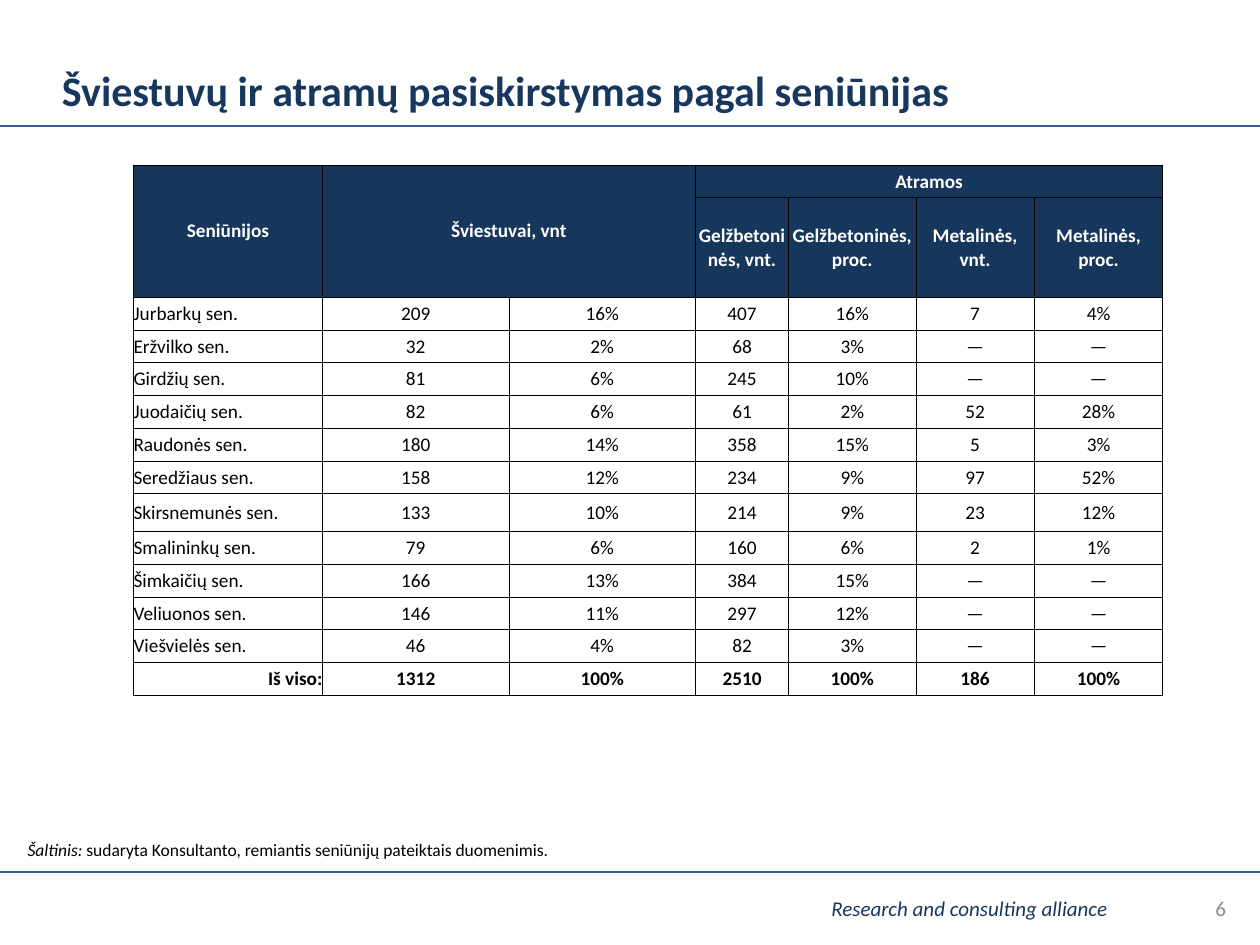
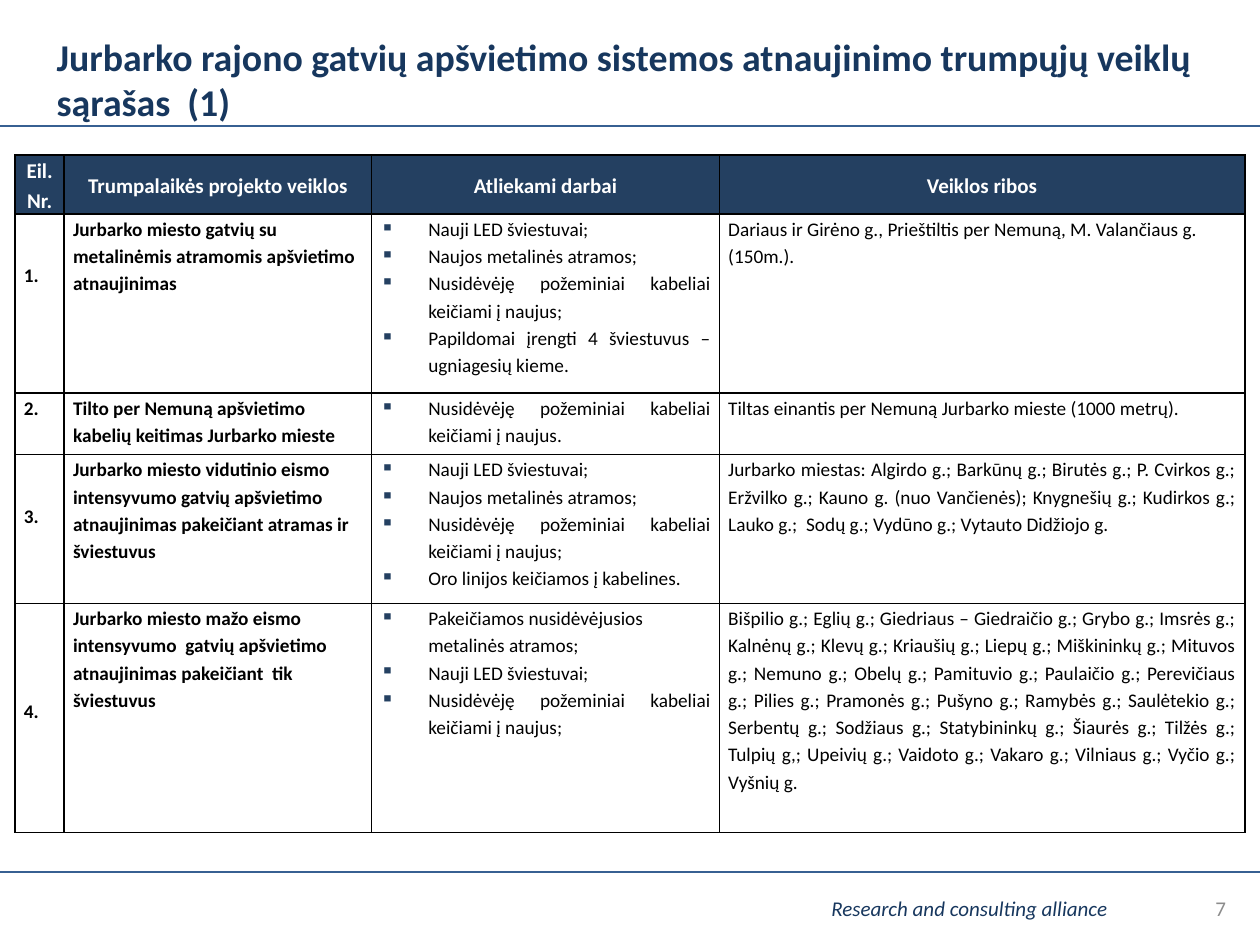
"""Build two slides on street lighting in the Jurbarkas district."""
import pptx
import pptx.util
import pptx.dml.color
import pptx.enum.shapes
import pptx.enum.text
import pptx.oxml
import pptx.oxml.ns
from pptx.util import Inches

RGBColor = pptx.dml.color.RGBColor
ALIGN = pptx.enum.text.PP_ALIGN
ANCHOR = pptx.enum.text.MSO_ANCHOR

NAVY = RGBColor(0x17, 0x37, 0x5E)
RULE_BLUE = RGBColor(0x37, 0x60, 0x92)
HEAD_NAVY = RGBColor(0x16, 0x36, 0x5C)
HEAD_SLATE = RGBColor(0x24, 0x40, 0x61)
GRAY = RGBColor(0x8C, 0x8C, 0x8C)
BLACK = RGBColor(0, 0, 0)
WHITE = RGBColor(0xFF, 0xFF, 0xFF)

FONT = "Calibri"
FOOTER = "Research and consulting alliance"

WARDS = [
    ("Jurbarkų sen.", "209", "16%", "407", "16%", "7", "4%"),
    ("Eržvilko sen.", "32", "2%", "68", "3%", "—", "—"),
    ("Girdžių sen.", "81", "6%", "245", "10%", "—", "—"),
    ("Juodaičių sen.", "82", "6%", "61", "2%", "52", "28%"),
    ("Raudonės sen.", "180", "14%", "358", "15%", "5", "3%"),
    ("Seredžiaus sen.", "158", "12%", "234", "9%", "97", "52%"),
    ("Skirsnemunės sen.", "133", "10%", "214", "9%", "23", "12%"),
    ("Smalininkų sen.", "79", "6%", "160", "6%", "2", "1%"),
    ("Šimkaičių sen.", "166", "13%", "384", "15%", "—", "—"),
    ("Veliuonos sen.", "146", "11%", "297", "12%", "—", "—"),
    ("Viešvielės sen.", "46", "4%", "82", "3%", "—", "—"),
    ("Iš viso:", "1312", "100%", "2510", "100%", "186", "100%"),
]
WARD_HEADS = [
    (0, 0, 1, 0, "Seniūnijos"),
    (0, 1, 1, 2, "Šviestuvai, vnt"),
    (0, 3, 0, 6, "Atramos"),
    (1, 3, 1, 3, "Gelžbetoninės, vnt."),
    (1, 4, 1, 4, "Gelžbetoninės, proc."),
    (1, 5, 1, 5, "Metalinės, vnt."),
    (1, 6, 1, 6, "Metalinės, proc."),
]

LED = "Nauji LED šviestuvai;"
POLES = "Naujos metalinės atramos;"
CABLES = "Nusidėvėję požeminiai kabeliai keičiami į naujus"
ACTIVITY_HEADS = ["Eil. Nr.", "Trumpalaikės projekto veiklos", "Atliekami darbai", "Veiklos ribos"]
ACTIVITIES = [
    ("1.", 0.37, "Jurbarko miesto gatvių su metalinėmis atramomis apšvietimo atnaujinimas",
     [LED, POLES, CABLES + ";", "Papildomai įrengti 4 šviestuvus – ugniagesių kieme."],
     "Dariaus ir Girėno g., Prieštiltis per Nemuną, M. Valančiaus g. (150m.)."),
    ("2.", 0, "Tilto per Nemuną apšvietimo kabelių keitimas Jurbarko mieste",
     [CABLES + "."],
     "Tiltas einantis per Nemuną Jurbarko mieste (1000 metrų)."),
    ("3.", 0.37, "Jurbarko miesto vidutinio eismo intensyvumo gatvių apšvietimo "
     "atnaujinimas pakeičiant atramas ir šviestuvus",
     [LED, POLES, CABLES + ";", "Oro linijos keičiamos į kabelines."],
     "Jurbarko miestas: Algirdo g.; Barkūnų g.; Birutės g.; P. Cvirkos g.; Eržvilko g.; "
     "Kauno g. (nuo Vančienės); Knygnešių g.; Kudirkos g.; Lauko g.;  Sodų g.; Vydūno g.; "
     "Vytauto Didžiojo g."),
    ("4.", 0.74, "Jurbarko miesto mažo eismo intensyvumo  gatvių apšvietimo "
     "atnaujinimas pakeičiant  tik šviestuvus",
     ["Pakeičiamos nusidėvėjusios metalinės atramos;", LED, CABLES + ";"],
     "Bišpilio g.; Eglių g.; Giedriaus – Giedraičio g.; Grybo g.; Imsrės g.; Kalnėnų g.; "
     "Klevų g.; Kriaušių g.; Liepų g.; Miškininkų g.; Mituvos g.; Nemuno g.; Obelų g.; "
     "Pamituvio g.; Paulaičio g.; Perevičiaus g.; Pilies g.; Pramonės g.; Pušyno g.; "
     "Ramybės g.; Saulėtekio g.; Serbentų g.; Sodžiaus g.; Statybininkų g.; Šiaurės g.; "
     "Tilžės g.; Tulpių g,; Upeivių g.; Vaidoto g.; Vakaro g.; Vilniaus g.; Vyčio g.; Vyšnių g."),
]


class Deck:
    """Holds the shared style and the current slide."""

    def __init__(self):
        self.prs = pptx.Presentation()
        self.prs.slide_width = Inches(10)
        self.prs.slide_height = Inches(7.5)
        self.s = None

    def slide(self, number, title, at, size):
        """Start a slide with its title, rules and footer."""
        self.s = self.prs.slides.add_slide(self.prs.slide_layouts[5])
        for y in (1, 6.92):
            self.rule(y)
        self.text((6.5, 7.06, 3.46, 0.29), [(FOOTER, dict(size=12, color=NAVY, italic=True))])
        self.text((7.5, 7.01, 2.33, 0.4), [(str(number), dict(size=12, color=GRAY))], ALIGN.RIGHT)
        sp = self.s.shapes.title
        sp.left, sp.top, sp.width, sp.height = map(Inches, at)
        self.fill_frame(sp.text_frame, [(title, dict(size=size, color=NAVY, bold=True))], ALIGN.LEFT)

    def rule(self, y):
        """Draw a line across the slide."""
        line = self.s.shapes.add_connector(
            pptx.enum.shapes.MSO_CONNECTOR.STRAIGHT, 0, Inches(y), Inches(10), Inches(y))
        line.line.color.rgb = RULE_BLUE
        line.line.width = pptx.util.Pt(1)
        line._element.spPr.append(pptx.oxml.parse_xml(
            f'<a:effectLst {pptx.oxml.ns.nsdecls("a")}/>'))

    def run(self, p, text, size=11, color=BLACK, bold=False, italic=False):
        """Add one styled run."""
        r = p.add_run()
        r.text = text
        r.font.name = FONT
        r.font.size = pptx.util.Pt(size)
        r.font.color.rgb = color
        r.font.bold = bold
        r.font.italic = italic

    def fill_frame(self, tf, runs, align):
        """Put one vertically centred paragraph in a frame."""
        tf.word_wrap = True
        tf.auto_size = pptx.enum.text.MSO_AUTO_SIZE.NONE
        tf.vertical_anchor = ANCHOR.MIDDLE
        p = tf.paragraphs[0]
        p.alignment = align
        for text, style in runs:
            self.run(p, text, **style)

    def text(self, at, runs, align=ALIGN.LEFT):
        """Add a text box."""
        sp = self.s.shapes.add_textbox(*map(Inches, at))
        self.fill_frame(sp.text_frame, runs, align)

    def table(self, left, top, cols, rows, border):
        """Add a plain table with black borders."""
        frame = self.s.shapes.add_table(len(rows), len(cols), Inches(left), Inches(top),
                                        Inches(sum(cols)), Inches(sum(rows)))
        table = frame.table
        table.first_row = table.horz_banding = False
        for col, width in zip(table.columns, cols):
            col.width = Inches(width)
        for row, height in zip(table.rows, rows):
            row.height = Inches(height)
        for cell in table.iter_cells():
            tc_pr = cell._tc.get_or_add_tcPr()
            for side in "LRTB":
                tc_pr.append(pptx.oxml.parse_xml(
                    f'<a:ln{side} {pptx.oxml.ns.nsdecls("a")} w="{pptx.util.Pt(border)}">'
                    f'<a:solidFill><a:srgbClr val="{BLACK}"/></a:solidFill></a:ln{side}>'))
            cell.fill.background()
        return table

    def cell(self, cell, lines, align=ALIGN.CENTER, anchor=ANCHOR.MIDDLE, fill=None,
             side=0, top=0, spacing=1, bullet=False, **style):
        """Fill a table cell with one paragraph for each line."""
        cell.margin_left = cell.margin_right = Inches(side)
        cell.margin_top, cell.margin_bottom = Inches(top), 0
        cell.vertical_anchor = anchor
        if fill is not None:
            cell.fill.solid()
            cell.fill.fore_color.rgb = fill
        tf = cell.text_frame
        for i, line in enumerate(lines):
            p = tf.add_paragraph() if i else tf.paragraphs[0]
            if bullet:
                self.bullet(p)
            p.alignment = align
            p.line_spacing = spacing
            self.run(p, line, **style)

    def bullet(self, p):
        """Give a paragraph a square bullet and a hanging indent."""
        p_pr = p._p.get_or_add_pPr()
        p_pr.set("marL", str(Inches(0.38)))
        p_pr.set("indent", str(-Inches(0.38)))
        for xml in (f'<a:buClr %s><a:srgbClr val="{HEAD_SLATE}"/></a:buClr>',
                    '<a:buChar %s char="▪"/>'):
            p_pr.append(pptx.oxml.parse_xml(xml % pptx.oxml.ns.nsdecls("a")))


def ward_slide(deck):
    """Show lamps and poles by ward."""
    deck.slide(6, "Šviestuvų ir atramų pasiskirstymas pagal seniūnijas", (0.39, 0.45, 9, 0.53), 24)
    deck.text((0.12, 6.58, 7.01, 0.32), [
        ("Šaltinis: ", dict(size=10, italic=True)),
        ("sudaryta Konsultanto, remiantis seniūnijų pateiktais duomenimis.", dict(size=10))])
    heights = [0.26, 0.79] + [0.26] * len(WARDS)
    heights[8] = 0.3
    table = deck.table(1.06, 1.31, [1.5, 1.48, 1.48, 0.74, 1.01, 0.94, 1.02], heights, 0.5)
    for r0, c0, r1, c1, label in WARD_HEADS:
        cell = table.cell(r0, c0)
        if (r0, c0) != (r1, c1):
            cell.merge(table.cell(r1, c1))
        deck.cell(cell, [label], fill=HEAD_NAVY, color=WHITE, bold=True)
    for i, ward in enumerate(WARDS, 2):
        total = i == len(WARDS) + 1
        name_align = ALIGN.RIGHT if total else ALIGN.LEFT
        for j, value in enumerate(ward):
            deck.cell(table.cell(i, j), [value], ALIGN.CENTER if j else name_align, bold=total)


def activity_slide(deck):
    """List the short-term activities."""
    deck.slide(7, "Jurbarko rajono gatvių apšvietimo sistemos atnaujinimo trumpųjų veiklų sąrašas  (1)",
               (0.35, 0.36, 9.37, 0.53), 21.6)
    table = deck.table(0.12, 1.23, [0.39, 2.44, 2.76, 4.17], [0.47, 1.42, 0.49, 1.18, 1.82], 1)
    shared = dict(side=0.07, spacing=1.15)
    for j, head in enumerate(ACTIVITY_HEADS):
        deck.cell(table.cell(0, j), [head], fill=HEAD_SLATE, size=12, color=WHITE, bold=True, **shared)
    shared["anchor"] = ANCHOR.TOP
    for i, (number, drop, name, works, area) in enumerate(ACTIVITIES, 1):
        deck.cell(table.cell(i, 0), [number], ALIGN.JUSTIFY, top=drop, bold=True, **shared)
        deck.cell(table.cell(i, 1), [name], ALIGN.LEFT, bold=True, **shared)
        deck.cell(table.cell(i, 2), works, ALIGN.JUSTIFY, bullet=True, **shared)
        deck.cell(table.cell(i, 3), [area], ALIGN.LEFT if i == 1 else ALIGN.JUSTIFY, **shared)
    table.cell(4, 2).text_frame.paragraphs[0].alignment = ALIGN.LEFT


def main():
    """Build and save the slides."""
    deck = Deck()
    ward_slide(deck)
    activity_slide(deck)
    deck.prs.save("out.pptx")


if __name__ == "__main__":
    main()
